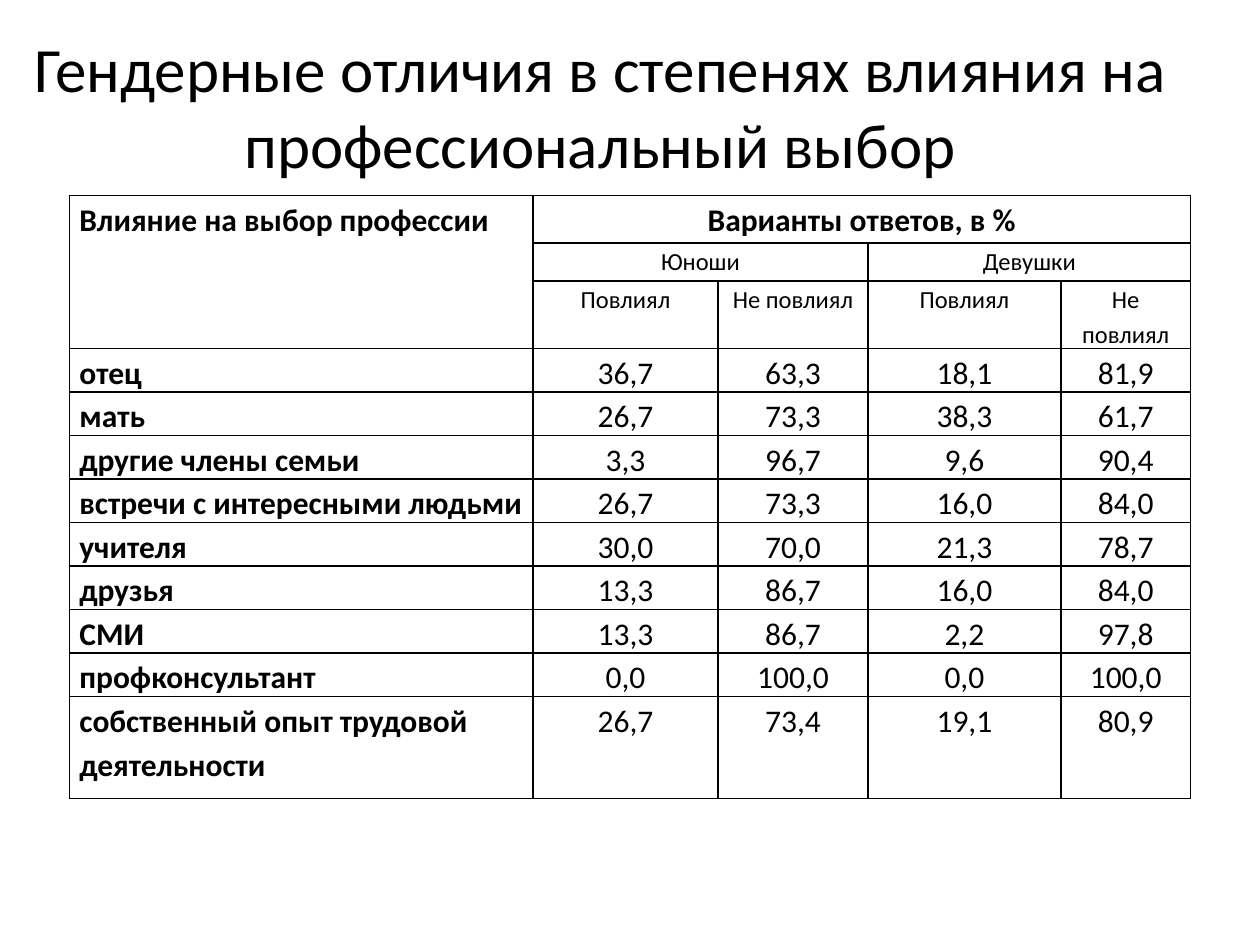
"""Builds a slide with a table of gender differences in influences on career choice."""
import dataclasses
import typing

import lxml.etree
import pptx
import pptx.dml.color
import pptx.enum.text
import pptx.oxml.ns
import pptx.util

ALIGN = pptx.enum.text.PP_ALIGN
ANCHOR = pptx.enum.text.MSO_ANCHOR


@dataclasses.dataclass(frozen=True)
class Theme:
    font: str = "Calibri"
    ink: str = "000000"
    paper: str = "FFFFFF"
    title_size: int = 36
    body_size: int = 18
    group_size: int = 14
    border_width: int = 1
    line_spacing: float = 1.15


class Heading(typing.NamedTuple):
    row: int
    column: int
    text: str
    rows: int = 1
    columns: int = 1
    size: int = 14
    bold: bool = False
    align: ALIGN = ALIGN.CENTER


class Influence(typing.NamedTuple):
    source: str
    shares: str


THEME = Theme()
SLIDE_COLUMNS, SLIDE_ROWS = 100, 75
COLUMN_WIDTHS = [36.8, 14.7, 11.9, 15.3, 10.3]
HEADING_HEIGHTS = [3.8, 3, 5.1]
INFLUENCE_HEIGHT, LAST_HEIGHT = 3.3, 8.1

HEADINGS = [
    Heading(0, 0, "Влияние на выбор профессии", rows=3, size=THEME.body_size, bold=True, align=ALIGN.LEFT),
    Heading(0, 1, "Варианты ответов, в %", columns=4, size=THEME.body_size, bold=True),
    Heading(1, 1, "Юноши", columns=2),
    Heading(1, 3, "Девушки", columns=2),
    *(Heading(2, column, answer) for column, answer in enumerate(["Повлиял", "Не повлиял"] * 2, 1)),
]
INFLUENCES = [
    Influence("отец", "36,7 63,3 18,1 81,9"),
    Influence("мать", "26,7 73,3 38,3 61,7"),
    Influence("другие члены семьи", "3,3 96,7 9,6 90,4"),
    Influence("встречи с интересными людьми", "26,7 73,3 16,0 84,0"),
    Influence("учителя", "30,0 70,0 21,3 78,7"),
    Influence("друзья", "13,3 86,7 16,0 84,0"),
    Influence("СМИ", "13,3 86,7 2,2 97,8"),
    Influence("профконсультант", "0,0 100,0 0,0 100,0"),
    Influence("собственный опыт трудовой деятельности", "26,7 73,4 19,1 80,9"),
]


def grid(units: float) -> int:
    """Turns units of the slide grid into a length."""
    return pptx.util.Inches(units / 10)


def write(frame, text: str, *, size: int, bold: bool = False, align: ALIGN = ALIGN.CENTER,
          spacing: float = 1.0) -> None:
    """Fills a text frame with one formatted paragraph."""
    frame.word_wrap = True
    paragraph = frame.paragraphs[0]
    paragraph.alignment = align
    paragraph.line_spacing = spacing
    run = paragraph.add_run()
    run.text = text
    run.font.name = THEME.font
    run.font.size = pptx.util.Pt(size)
    run.font.bold = bold
    run.font.color.rgb = pptx.dml.color.RGBColor.from_string(THEME.ink)


def style_cell(cell) -> None:
    """Gives a cell its insets, borders and fill."""
    cell.margin_left = cell.margin_right = grid(0.8)
    cell.margin_top = cell.margin_bottom = 0
    cell.vertical_anchor = ANCHOR.TOP
    properties = cell._tc.get_or_add_tcPr()
    qn = pptx.oxml.ns.qn
    for side in ("lnL", "lnR", "lnT", "lnB"):
        border = lxml.etree.SubElement(properties, qn(f"a:{side}"), w=str(pptx.util.Pt(THEME.border_width)))
        solid = lxml.etree.SubElement(border, qn("a:solidFill"))
        lxml.etree.SubElement(solid, qn("a:srgbClr"), val=THEME.ink)
    cell.fill.solid()
    cell.fill.fore_color.rgb = pptx.dml.color.RGBColor.from_string(THEME.paper)


def add_title(slide, text: str) -> None:
    """Adds the centred slide title."""
    title = slide.shapes.add_textbox(0, grid(5.2), grid(95.3), grid(6.3)).text_frame
    title.vertical_anchor = ANCHOR.MIDDLE
    write(title, text, size=THEME.title_size)


def add_influence_table(slide) -> None:
    """Adds the table of influences with its three heading rows."""
    heights = HEADING_HEIGHTS + [INFLUENCE_HEIGHT] * (len(INFLUENCES) - 1) + [LAST_HEIGHT]
    table = slide.shapes.add_table(
        len(heights), len(COLUMN_WIDTHS), grid(5.5), grid(15.5),
        grid(sum(COLUMN_WIDTHS)), grid(sum(heights))).table
    table.first_row = table.horz_banding = False
    for column, width in zip(table.columns, COLUMN_WIDTHS):
        column.width = grid(width)
    for row, height in zip(table.rows, heights):
        row.height = grid(height)
    for cell in table.iter_cells():
        style_cell(cell)
    for heading in HEADINGS:
        cell = table.cell(heading.row, heading.column)
        if heading.rows > 1 or heading.columns > 1:
            cell.merge(table.cell(heading.row + heading.rows - 1, heading.column + heading.columns - 1))
        write(cell.text_frame, heading.text, size=heading.size, bold=heading.bold,
              align=heading.align, spacing=THEME.line_spacing)
    for row, influence in enumerate(INFLUENCES, len(HEADING_HEIGHTS)):
        for column, text in enumerate([influence.source, *influence.shares.split()]):
            is_source = column == 0
            write(table.cell(row, column).text_frame, text, size=THEME.body_size, bold=is_source,
                  align=ALIGN.LEFT if is_source else ALIGN.CENTER, spacing=THEME.line_spacing)


def main() -> None:
    """Builds and saves the presentation."""
    presentation = pptx.Presentation()
    presentation.slide_width = grid(SLIDE_COLUMNS)
    presentation.slide_height = grid(SLIDE_ROWS)
    slide = presentation.slides.add_slide(presentation.slide_layouts[6])
    add_title(slide, "Гендерные отличия в степенях влияния на профессиональный выбор")
    add_influence_table(slide)
    presentation.save("out.pptx")


if __name__ == "__main__":
    main()
